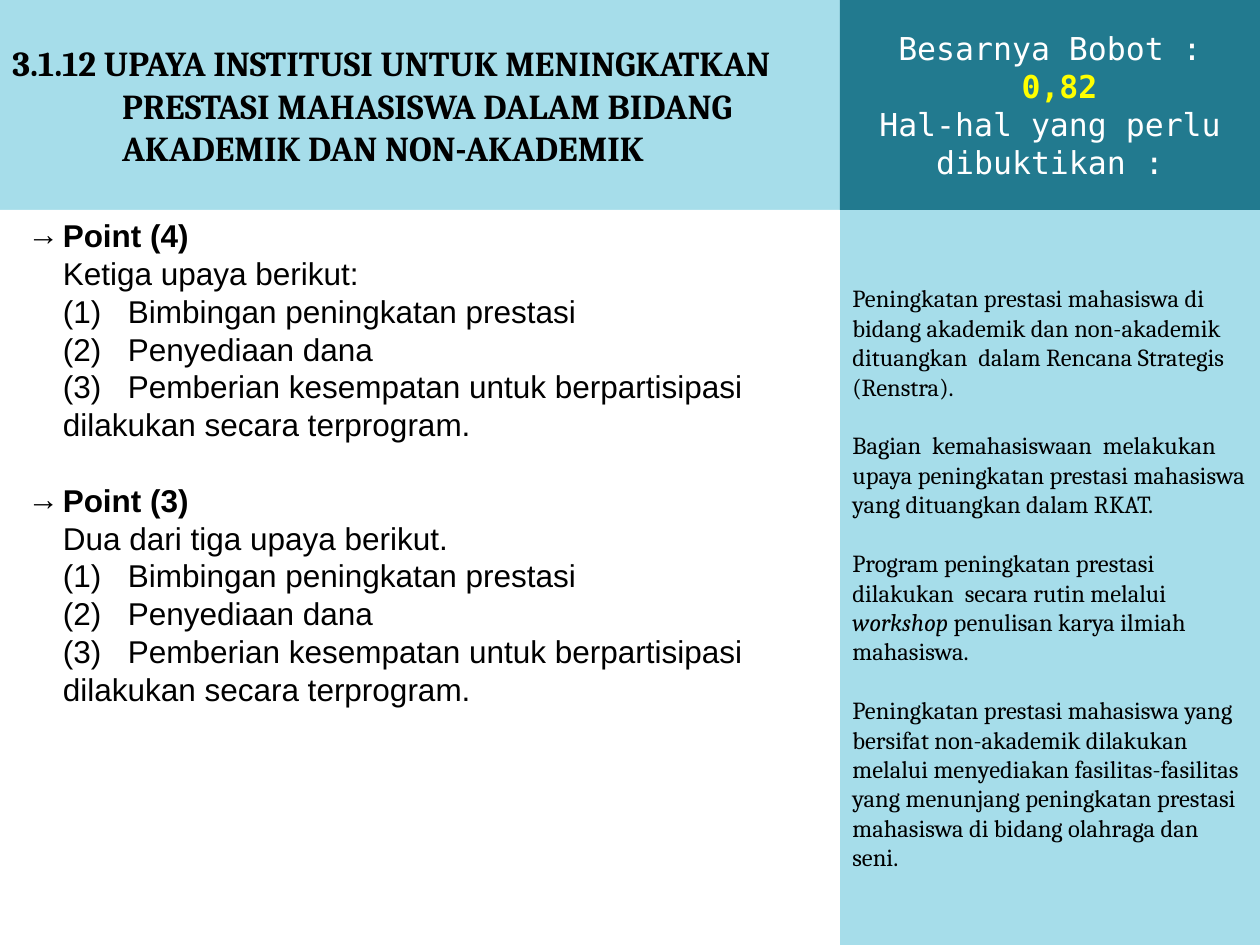
from dataclasses import dataclass

from lxml.etree import SubElement
from pptx import Presentation
from pptx.dml.color import RGBColor as RGB
from pptx.enum.shapes import MSO_SHAPE as Shape
from pptx.enum.text import MSO_ANCHOR as Anchor, PP_ALIGN as Align
from pptx.oxml.ns import qn
from pptx.util import Pt


@dataclass(frozen=True)
class Theme:
    pale: str = "A6DDEA"
    teal: str = "227A8F"
    white: str = "FFFFFF"
    black: str = "000000"
    yellow: str = "FFFF00"
    serif: str = "Cambria"
    sans: str = "Arial"
    mono: str = "DejaVu Sans Mono"
    title_size: float = 20
    body_size: float = 18
    side_size: float = 14
    leading: float = 1.2


T = Theme()


@dataclass(frozen=True)
class Run:
    text: str
    bold: bool = False
    italic: bool = False
    color: str = ""


@dataclass(frozen=True)
class Para:
    runs: tuple[Run, ...]
    margin: float = 0
    indent: float = 0
    bullet: str = ""
    gap: bool = False  # one line of space before


@dataclass(frozen=True)
class Panel:
    left: float
    top: float
    width: float
    height: float
    fill: str
    font: str
    size: float
    paras: tuple[Para, ...]
    color: str = T.black
    anchor: Anchor = Anchor.MIDDLE
    align: Align = Align.LEFT


def add_para(tf, panel: Panel, para: Para, first: bool) -> None:
    p = tf.paragraphs[0] if first else tf.add_paragraph()
    pPr = p._p.get_or_add_pPr()
    pPr.set("marL", str(Pt(para.margin)))
    pPr.set("indent", str(Pt(para.indent)))
    if para.bullet:
        SubElement(pPr, qn("a:buFont")).set("typeface", T.sans)
        SubElement(pPr, qn("a:buChar")).set("char", para.bullet)
    p.alignment = panel.align
    line = panel.size * T.leading
    p.line_spacing = Pt(line)
    if para.gap:
        p.space_before = Pt(line)
    for run in para.runs:
        r = p.add_run()
        r.text = run.text
        r.font.name, r.font.size = panel.font, Pt(panel.size)
        r.font.bold, r.font.italic = run.bold, run.italic
        r.font.color.rgb = RGB.from_string(run.color or panel.color)


def add_panel(s, panel: Panel) -> None:
    sp = s.shapes.add_shape(Shape.RECTANGLE, Pt(panel.left), Pt(panel.top),
                            Pt(panel.width), Pt(panel.height))
    sp.shadow.inherit = False
    sp.fill.solid()
    sp.fill.fore_color.rgb = RGB.from_string(panel.fill)
    sp.line.fill.background()
    tf = sp.text_frame
    tf.word_wrap = True
    tf.vertical_anchor = panel.anchor
    for i, para in enumerate(panel.paras):
        add_para(tf, panel, para, first=i == 0)


def score_block(score: int, intro: str, gap: bool) -> tuple[Para, ...]:
    """Heading, intro, numbered efforts and closing line for one score."""
    efforts = ("Bimbingan peningkatan prestasi", "Penyediaan dana",
               "Pemberian kesempatan untuk berpartisipasi")
    text_x, effort_x = 28.8, 66
    return (
        Para((Run(f"Point ({score})", bold=True),), text_x, -20.16, "→", gap),
        Para((Run(intro),), text_x),
        *(Para((Run(f"({n})\t{effort}"),), effort_x, text_x - effort_x)
          for n, effort in enumerate(efforts, 1)),
        Para((Run("dilakukan secara terprogram."),), text_x),
    )


# Slide grid
WIDTH, HEIGHT = 720, 540
HEAD, SPLIT = 120, 480
SIDE, BODY = WIDTH - SPLIT, HEIGHT - HEAD

# Panel contents
title = (Para((Run("3.1.12 UPAYA INSTITUSI UNTUK MENINGKATKAN PRESTASI MAHASISWA "
                   "DALAM BIDANG AKADEMIK DAN NON-AKADEMIK", bold=True),), 62.64, -62.64),)

evidence_runs = (
    (Run("Peningkatan prestasi mahasiswa di bidang akademik dan non-akademik "
         "dituangkan  dalam Rencana Strategis (Renstra)."),),
    (Run("Bagian  kemahasiswaan  melakukan upaya peningkatan prestasi mahasiswa "
         "yang dituangkan dalam RKAT."),),
    (Run("Program peningkatan prestasi dilakukan  secara rutin melalui "),
     Run("workshop", italic=True),
     Run(" penulisan karya ilmiah mahasiswa.")),
    (Run("Peningkatan prestasi mahasiswa yang bersifat non-akademik dilakukan "
         "melalui menyediakan fasilitas-fasilitas yang menunjang peningkatan "
         "prestasi mahasiswa di bidang olahraga dan seni."),),
)
evidence = tuple(Para(runs, gap=i > 0) for i, runs in enumerate(evidence_runs))

scores = (score_block(4, "Ketiga upaya berikut:", gap=False)
          + score_block(3, "Dua dari tiga upaya berikut.", gap=True))

weight = (
    Para((Run("Besarnya Bobot :"),)),
    Para((Run(" "), Run("0,82", bold=True, color=T.yellow))),
    Para((Run("Hal-hal yang perlu dibuktikan :"),)),
)

# Panels from back to front
PANELS = (
    Panel(0, 0, 486, HEAD, T.pale, T.serif, T.title_size, title),
    Panel(SPLIT, HEAD, SIDE, BODY, T.pale, T.serif, T.side_size, evidence),
    Panel(0, HEAD, SPLIT, BODY, T.white, T.sans, T.body_size, scores, anchor=Anchor.TOP),
    Panel(SPLIT, 0, SIDE, HEAD, T.teal, T.mono, T.body_size, weight,
          color=T.white, align=Align.CENTER),
)


def main() -> None:
    prs = Presentation()
    prs.slide_width, prs.slide_height = Pt(WIDTH), Pt(HEIGHT)
    s = prs.slides.add_slide(prs.slide_layouts[6])
    for panel in PANELS:
        add_panel(s, panel)
    prs.save("out.pptx")


if __name__ == "__main__":
    main()
